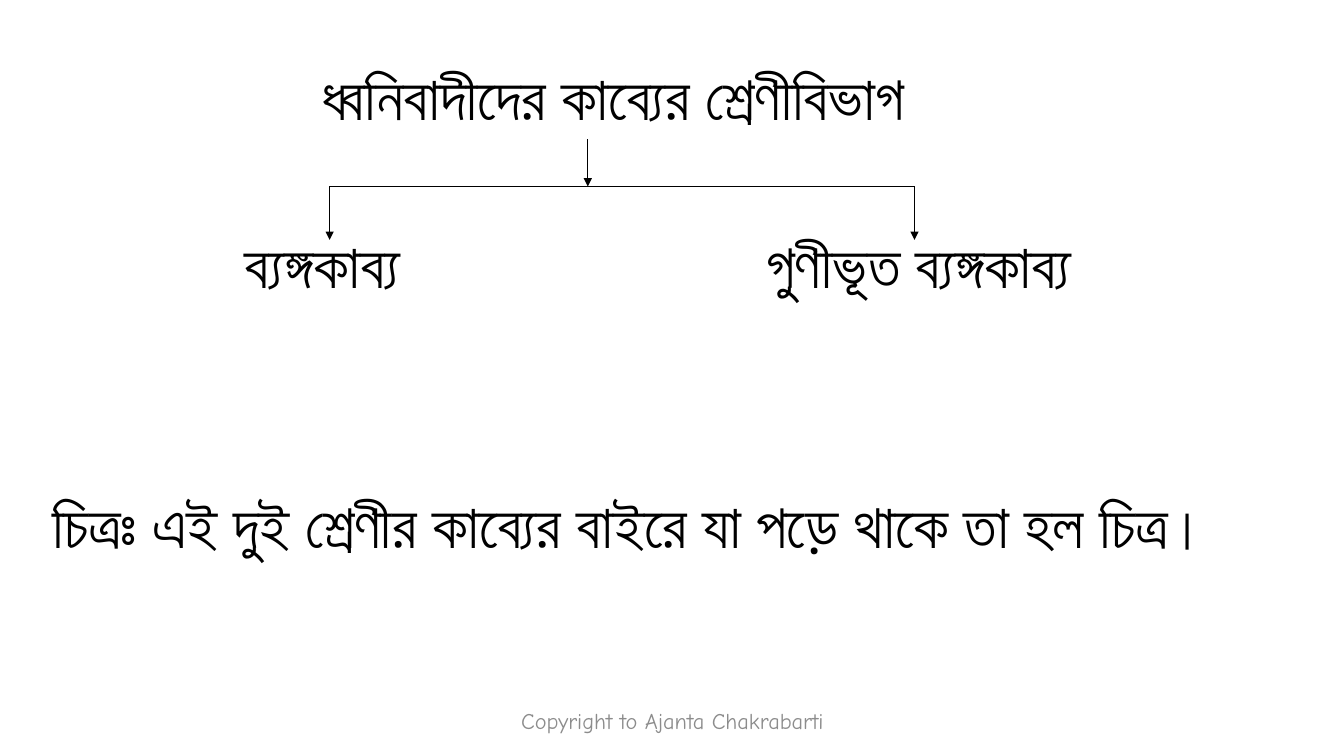
from pptx import Presentation
from pptx.dml.color import RGBColor
from pptx.enum.shapes import MSO_CONNECTOR
from pptx.enum.text import MSO_ANCHOR, MSO_AUTO_SIZE, PP_ALIGN
from pptx.oxml.ns import qn
from pptx.util import Inches, Pt
from lxml import etree

STRAIGHT = MSO_CONNECTOR.STRAIGHT
TOP, MIDDLE = MSO_ANCHOR.TOP, MSO_ANCHOR.MIDDLE
LEFT, CENTER = PP_ALIGN.LEFT, PP_ALIGN.CENTER
GROW, FIXED = MSO_AUTO_SIZE.SHAPE_TO_FIT_TEXT, MSO_AUTO_SIZE.NONE

# Content: text, left, top, width
STATEMENTS = [
    ("ধ্বনিবাদীদের কাব্যের শ্রেণীবিভাগ", 3.09, 0.54, 9.12),
    ("গুণীভূত ব্যঙ্গকাব্য", 7.5, 2.2, 3.5),
    ("ব্যঙ্গকাব্য", 2.33, 2.2, 1.86),
    ("চিত্রঃ এই দুই শ্রেণীর কাব্যের বাইরে যা পড়ে থাকে তা হল চিত্র।", 0.42, 4.78, 12.39),
]
STATEMENT_HEIGHT = 0.84
FOOTER = "Copyright to Ajanta Chakrabarti"

# Tree geometry
TRUNK_X, BRANCH_XS = 5.83, (3.27, 9.07)
TRUNK_TOP, BAR_Y, BRANCH_END = 1.38, 1.85, 2.38

THEME = {
    "ink": RGBColor(0x00, 0x00, 0x00),
    "muted": RGBColor(0x8C, 0x8C, 0x8C),
    "body_font": "Lato",
    "footer_font": "Comic Neue",
    "body_size": Pt(44),
    "footer_size": Pt(16),
    "line_width": Pt(0.5),
}


def add_text(slide, text, box, style, align=LEFT, anchor=TOP, fit=GROW):
    shape = slide.shapes.add_textbox(*map(Inches, box))
    frame = shape.text_frame
    frame.word_wrap = True
    frame.auto_size = fit
    frame.vertical_anchor = anchor
    paragraph = frame.paragraphs[0]
    paragraph.alignment = align
    run = paragraph.add_run()
    run.text = text
    run.font.name = THEME[style + "_font"]
    run.font.size = THEME[style + "_size"]
    run.font.color.rgb = THEME["ink" if style == "body" else "muted"]


def add_line(slide, start, end, arrow=False):
    connector = slide.shapes.add_connector(STRAIGHT, *map(Inches, start + end))
    connector.line.color.rgb = THEME["ink"]
    connector.line.width = THEME["line_width"]
    if arrow:
        line = connector.line._get_or_add_ln()
        etree.SubElement(line, qn("a:tailEnd"), type="triangle")
    etree.SubElement(connector._element.spPr, qn("a:effectLst"))


def main():
    presentation = Presentation()
    presentation.slide_width = Inches(13.33)
    presentation.slide_height = Inches(7.5)
    slide = presentation.slides.add_slide(presentation.slide_layouts[6])

    # Footer and statements
    add_text(slide, FOOTER, (4.42, 6.95, 4.5, 0.4), "footer", CENTER, MIDDLE, FIXED)
    for text, left, top, width in STATEMENTS:
        add_text(slide, text, (left, top, width, STATEMENT_HEIGHT), "body")

    # Trunk, branches and the bar that joins them
    add_line(slide, (TRUNK_X, TRUNK_TOP), (TRUNK_X, BAR_Y), arrow=True)
    for x in BRANCH_XS:
        add_line(slide, (x, BAR_Y), (x, BRANCH_END), arrow=True)
    add_line(slide, (BRANCH_XS[1], BAR_Y), (BRANCH_XS[0], BAR_Y))

    presentation.save("out.pptx")


if __name__ == "__main__":
    main()
